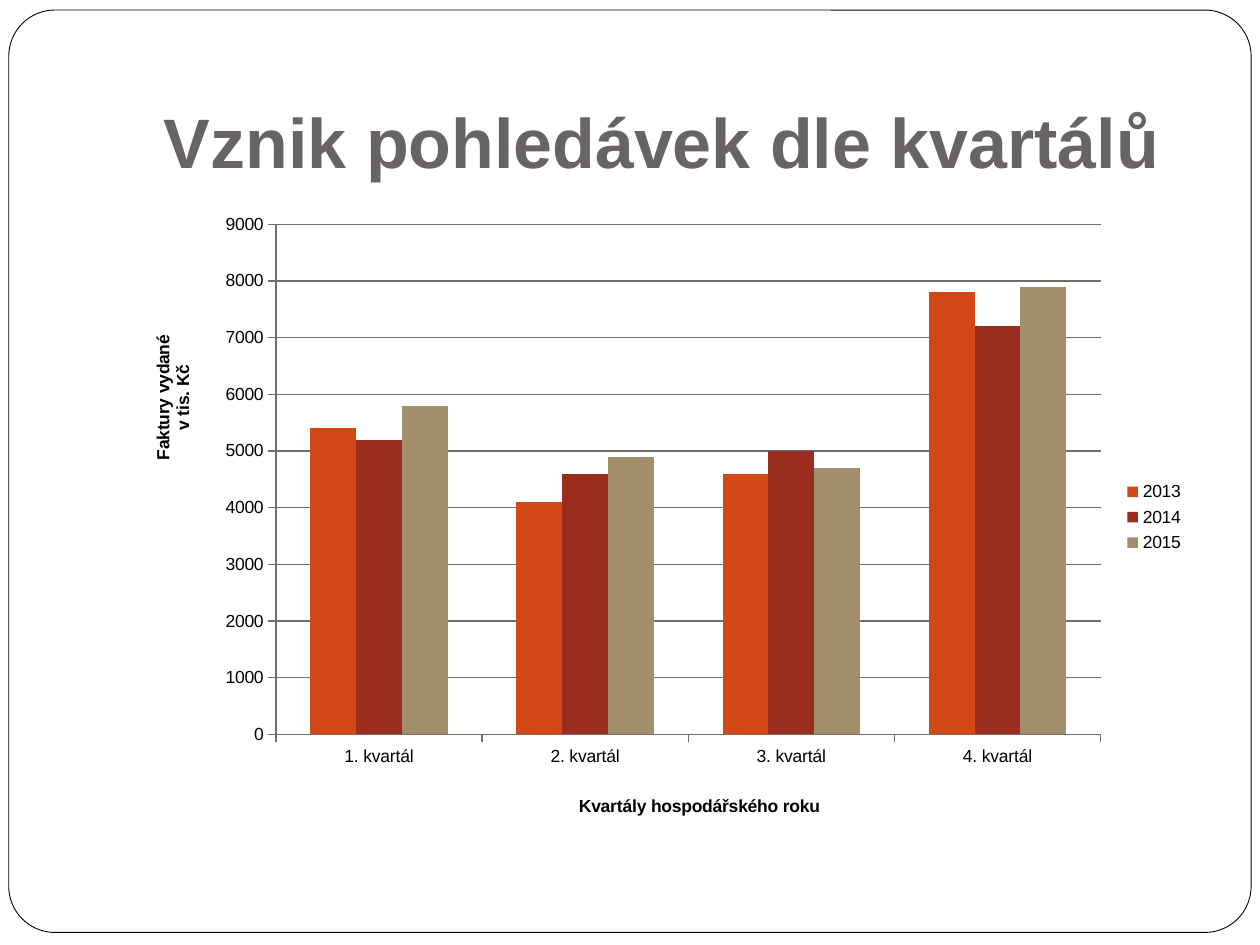
from typing import NamedTuple

from lxml.etree import SubElement
from pptx import Presentation
from pptx.chart.data import CategoryChartData
from pptx.dml.color import RGBColor
from pptx.enum.chart import XL_CHART_TYPE as ChartType, XL_LEGEND_POSITION as LegendPos
from pptx.enum.chart import XL_TICK_MARK as Tick
from pptx.enum.shapes import MSO_SHAPE as Shape
from pptx.enum.text import MSO_ANCHOR as Anchor, PP_ALIGN as Align
from pptx.oxml.ns import qn
from pptx.util import Inches, Pt

COLORS = {
    "white": "FFFFFF",
    "black": "000000",
    "title": "696464",
    "grid": "6E6E6E",
    "orange": "D34817",
    "red": "9B2D1F",
    "tan": "A28E6A",
}
FONT = "Arial"
QUARTERS = [f"{n}. kvartál" for n in range(1, 5)]


class Year(NamedTuple):
    name: str
    color: str
    invoices: tuple[int, ...]


YEARS = [
    Year("2013", "orange", (5400, 4100, 4600, 7800)),
    Year("2014", "red", (5200, 4600, 5000, 7200)),
    Year("2015", "tan", (5800, 4900, 4700, 7900)),
]


def rgb(name: str) -> RGBColor:
    return RGBColor.from_string(COLORS[name])


def style_font(font, size: float, color: str, bold: bool = False) -> None:
    font.name = FONT
    font.size = Pt(size)
    font.bold = bold
    font.color.rgb = rgb(color)


def set_layout(el, index: int, **box: float) -> None:
    for old in el.findall(qn("c:layout")):
        el.remove(old)
    layout = el.makeelement(qn("c:layout"), {})
    el.insert(index, layout)
    manual = SubElement(layout, qn("c:manualLayout"))
    if index == 0:
        SubElement(manual, qn("c:layoutTarget")).set("val", "inner")
    for key in ("x", "y"):
        SubElement(manual, qn(f"c:{key}Mode")).set("val", "edge")
    for key, value in box.items():
        SubElement(manual, qn(f"c:{key}")).set("val", str(value))


def style_axis(axis, title: str, x: float, y: float) -> None:
    axis.major_tick_mark = Tick.OUTSIDE
    axis.minor_tick_mark = Tick.NONE
    axis.format.line.color.rgb = rgb("grid")
    style_font(axis.tick_labels.font, 10, "black")
    tf = axis.axis_title.text_frame
    tf.text = title
    for p in tf.paragraphs:
        style_font(p.font, 10, "black", True)
    set_layout(axis.axis_title._element, 1, x=x, y=y)


def add_frame(slide) -> None:
    s = slide.shapes.add_shape(
        Shape.ROUNDED_RECTANGLE, Inches(0.07), Inches(0.08), Inches(9.86), Inches(7.32)
    )
    s.adjustments[0] = 0.05
    s.shadow.inherit = False
    s.fill.solid()
    s.fill.fore_color.rgb = rgb("white")
    s.line.color.rgb = rgb("black")
    s.line.width = Pt(0.5)


def add_title(slide, text: str) -> None:
    s = slide.shapes.add_textbox(Inches(1), Inches(0.3), Inches(8.5), Inches(1.25))
    tf = s.text_frame
    tf.word_wrap = True
    tf.vertical_anchor = Anchor.BOTTOM
    tf.margin_bottom = Inches(0.1)
    p = tf.paragraphs[0]
    p.text = text
    p.alignment = Align.CENTER
    style_font(p.font, 40, "title", True)


def add_invoice_chart(slide) -> None:
    data = CategoryChartData()
    data.categories = QUARTERS
    for year in YEARS:
        data.add_series(year.name, year.invoices)
    chart = slide.shapes.add_chart(
        ChartType.COLUMN_CLUSTERED, Inches(1), Inches(1.58), Inches(8.5), Inches(5), data
    ).chart
    style_font(chart.font, 10, "black")
    chart.has_title = False
    plot = chart.plots[0]
    plot.gap_width = 150
    plot.overlap = 0
    plot.vary_by_categories = False
    for series, year in zip(plot.series, YEARS):
        series.format.fill.solid()
        series.format.fill.fore_color.rgb = rgb(year.color)

    style_axis(chart.category_axis, "Kvartály hospodářského roku", 0.42, 0.94)
    axis = chart.value_axis
    style_axis(axis, "Faktury vydané\nv tis. Kč", 0.02, 0.21)
    axis.minimum_scale = 0
    axis.maximum_scale = 9000
    axis.major_unit = 1000
    axis.tick_labels.number_format = "General"
    axis.tick_labels.number_format_is_linked = False
    axis.major_gridlines.format.line.color.rgb = rgb("grid")

    chart.has_legend = True
    chart.legend.position = LegendPos.RIGHT
    chart.legend.include_in_layout = False
    style_font(chart.legend.font, 10, "black")
    set_layout(chart.legend._element, 1, x=0.92, y=0.44, w=0.08, h=0.13)
    plot_area = chart._chartSpace.chart.plotArea
    set_layout(plot_area, 0, x=0.14, y=0.04, w=0.77, h=0.81)


def main() -> None:
    prs = Presentation()
    prs.slide_width = Inches(10)
    prs.slide_height = Inches(7.5)
    slide = prs.slides.add_slide(prs.slide_layouts[6])
    add_frame(slide)
    add_title(slide, "Vznik pohledávek dle kvartálů")
    add_invoice_chart(slide)
    prs.save("out.pptx")


if __name__ == "__main__":
    main()
